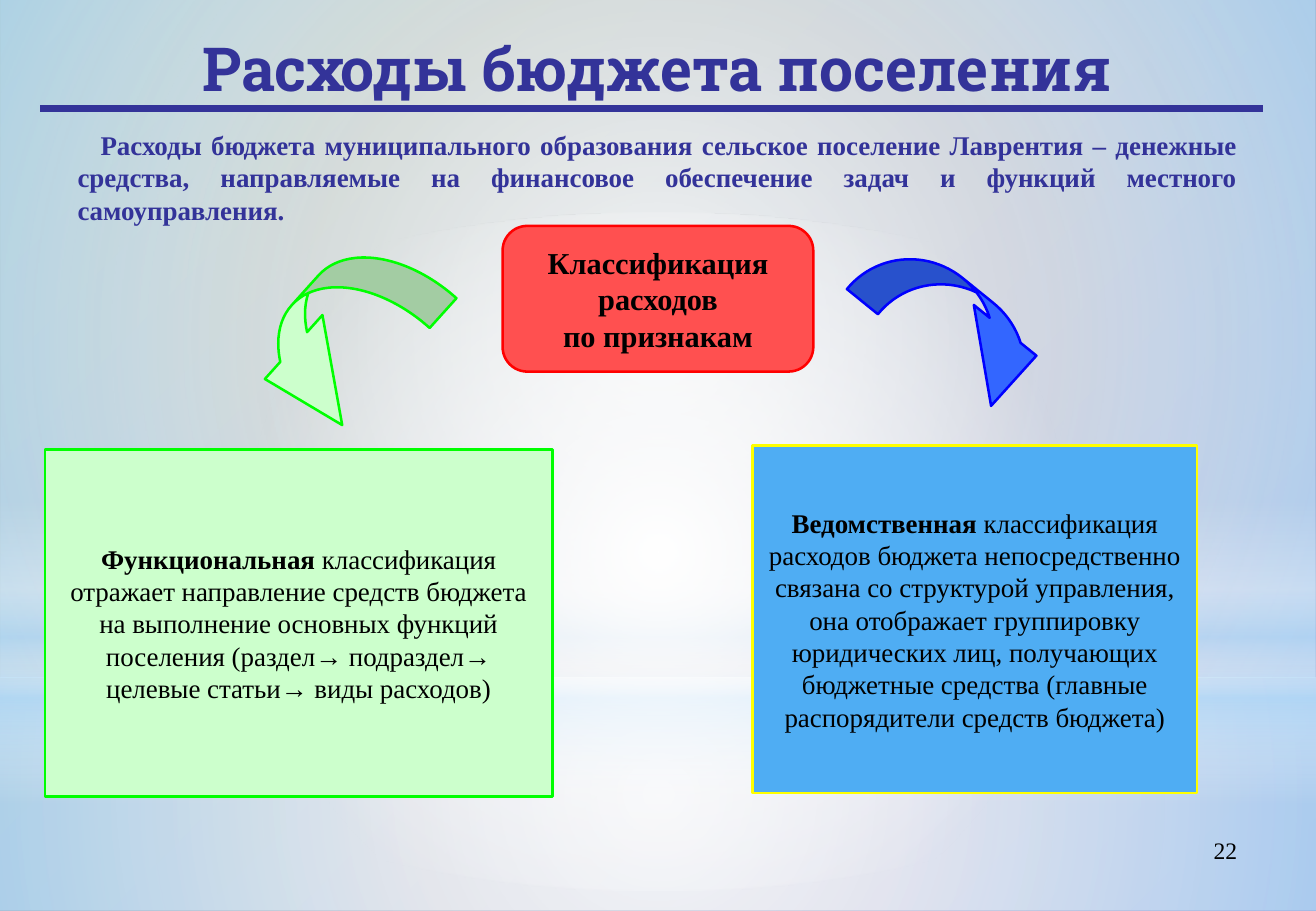
from lxml import etree
from pptx import Presentation
from pptx.dml.color import RGBColor
from pptx.enum import shapes, text
from pptx.oxml import ns
from pptx.util import Pt

WIDTH, HEIGHT = 780.48, 540
HORIZON = 401.76

BLACK = RGBColor(0x00, 0x00, 0x00)
WHITE = RGBColor(0xFF, 0xFF, 0xFF)
SKY = RGBColor(0xB4, 0xDC, 0xFA)
SAGE = RGBColor(0x96, 0xAB, 0x94)
LAVENDER = RGBColor(0x84, 0x88, 0xC4)
INDIGO = RGBColor(0x33, 0x33, 0x99)
CORAL = RGBColor(0xFF, 0x50, 0x50)
RED = RGBColor(0xFF, 0x00, 0x00)
MINT = RGBColor(0xCC, 0xFF, 0xCC)
GREEN = RGBColor(0x00, 0xFF, 0x00)
AZURE = RGBColor(0x4F, 0xAD, 0xF3)
YELLOW = RGBColor(0xFF, 0xFF, 0x00)
COBALT = RGBColor(0x33, 0x66, 0xFF)
BLUE = RGBColor(0x00, 0x00, 0xFF)

SERIF = "Times New Roman"
SLAB = "Roboto Slab"
KIND = shapes.MSO_SHAPE
ALIGN = text.PP_ALIGN
MIDDLE = text.MSO_ANCHOR.MIDDLE


def add_element(parent, tag, **attributes):
    values = {name: str(value) for name, value in attributes.items()}
    return etree.SubElement(parent, ns.qn(tag), values)


def paint_background(slide):
    fill = slide.background.fill
    fill.gradient()
    fill.gradient_angle = 315
    for stop, color, position in zip(fill.gradient_stops, (SAGE, LAVENDER), (0, 1)):
        stop.color.rgb = color
        stop.position = position


def add_shape(slide, kind, box, fill=None, line=None, adjustments=(), rotation=0):
    shape = slide.shapes.add_shape(kind, *map(Pt, box))
    shape.shadow.inherit = False
    shape.rotation = rotation
    for index, value in enumerate(adjustments):
        shape.adjustments[index] = value
    if fill is not None:
        shape.fill.solid()
        shape.fill.fore_color.rgb = fill
    if line is None:
        shape.line.fill.background()
    else:
        shape.line.color.rgb = line
        shape.line.width = Pt(1.5)
    return shape


def add_glow(slide, kind, top, height, stops, radial=True):
    shape = add_shape(slide, kind, (0, top, WIDTH, height))
    shape.fill.gradient()
    gradient = shape._element.spPr.find(ns.qn("a:gradFill"))
    for child in list(gradient):
        gradient.remove(child)
    stop_list = add_element(gradient, "a:gsLst")
    for position, color, opacity in stops:
        stop = add_element(stop_list, "a:gs", pos=position * 1000)
        tint = add_element(stop, "a:srgbClr", val=color)
        add_element(tint, "a:alpha", val=opacity * 1000)
    if radial:
        center = add_element(gradient, "a:path", path="circle")
        add_element(center, "a:fillToRect", l=50000, t=50000, r=50000, b=50000)
    else:
        add_element(gradient, "a:lin", ang=90 * 60000, scaled=0)


def write_text(shape, paragraphs, size, color=BLACK, font=SERIF, align=ALIGN.CENTER,
               anchor=MIDDLE, margins=(7.2, 3.6), bold=None, indent=0):
    frame = shape.text_frame
    frame.word_wrap = True
    frame.vertical_anchor = anchor
    frame.margin_left = frame.margin_right = Pt(margins[0])
    frame.margin_top = frame.margin_bottom = Pt(margins[1])
    for index, runs in enumerate(paragraphs):
        paragraph = frame.add_paragraph() if index else frame.paragraphs[0]
        paragraph.alignment = align
        if indent:
            paragraph._p.get_or_add_pPr().set("indent", str(Pt(indent)))
        paragraph.font.name = font
        paragraph.font.size = Pt(size)
        paragraph.font.color.rgb = color
        paragraph.font.bold = bold
        for words, run_bold in runs:
            run = paragraph.add_run()
            run.text = words
            run.font.bold = run_bold


def add_label(slide, box, words, size, **style):
    label = slide.shapes.add_textbox(*map(Pt, box))
    write_text(label, [[(words, None)]], size, **style)


def add_definition(slide, box, fill, line, term, meaning):
    shape = add_shape(slide, KIND.RECTANGLE, box, fill, line)
    write_text(shape, [[(term, True), (meaning, False)]], 16, margins=(8.64, 0))


def add_rule(slide, left, right, y):
    rule = slide.shapes.add_connector(
        shapes.MSO_CONNECTOR.STRAIGHT, Pt(left), Pt(y), Pt(right), Pt(y))
    rule.line.color.rgb = INDIGO
    rule.line.width = Pt(3.75)
    add_element(rule._element.spPr, "a:effectLst")


def add_backdrop(slide):
    paint_background(slide)
    add_glow(slide, KIND.RECTANGLE, HORIZON, HEIGHT - HORIZON,
             [(0, WHITE, 91), (37, WHITE, 76), (100, SKY, 79)])
    add_glow(slide, KIND.RECTANGLE, 0, HORIZON,
             [(0, WHITE, 89), (48, WHITE, 62), (100, SKY, 79)])
    add_glow(slide, KIND.RECTANGLE, 296.64, 180,
             [(0, WHITE, 0), (29, WHITE, 30), (45, SKY, 40),
              (55, WHITE, 26), (65, SKY, 60), (100, WHITE, 0)], radial=False)
    add_glow(slide, KIND.OVAL, 126, HORIZON, [(0, WHITE, 100), (56, WHITE, 0)])


def main():
    presentation = Presentation()
    presentation.slide_width = Pt(WIDTH)
    presentation.slide_height = Pt(HEIGHT)
    slide = presentation.slides.add_slide(presentation.slide_layouts[6])
    add_backdrop(slide)

    add_label(slide, (558.72, 491.76, 182.16, 37.44), "22", 14,
              align=ALIGN.RIGHT, anchor=text.MSO_ANCHOR.TOP)
    add_label(slide, (38.88, 14.4, 702, 50.4), "Расходы бюджета поселения", 36,
              color=INDIGO, font=SLAB, bold=True)
    add_label(slide, (38.88, 72.72, 702, 51.12),
              "Расходы бюджета муниципального образования сельское поселение "
              "Лаврентия – денежные средства, направляемые на финансовое "
              "обеспечение задач и функций местного самоуправления.", 16,
              color=INDIGO, align=ALIGN.JUSTIFY, anchor=text.MSO_ANCHOR.TOP,
              bold=True, indent=13.68)
    add_rule(slide, 23.76, 748.8, 64.4)

    classification = add_shape(slide, KIND.ROUNDED_RECTANGLE,
                               (298.08, 133.92, 184.32, 86.4), CORAL, RED, [0.17])
    write_text(classification,
               [[("Классификация расходов", None)], [("по признакам", None)]],
               18, margins=(10.08, 3.6), bold=True)

    add_definition(slide, (26.64, 266.4, 300.96, 205.92), MINT, GREEN,
                   "Функциональная",
                   " классификация отражает направление средств бюджета на "
                   "выполнение основных функций поселения (раздел→ подраздел→ "
                   "целевые статьи→ виды расходов)")
    add_definition(slide, (446.4, 264.24, 263.52, 205.92), AZURE, YELLOW,
                   "Ведомственная ",
                   "классификация расходов бюджета непосредственно связана со "
                   "структурой управления, она отображает группировку "
                   "юридических лиц, получающих бюджетные средства (главные "
                   "распорядители средств бюджета)")

    add_shape(slide, KIND.CURVED_UP_ARROW, (138.96, 165.6, 126.72, 69.84),
              MINT, GREEN, (0.34, 0.73, 0.75), 132)
    add_shape(slide, KIND.CURVED_DOWN_ARROW, (502.56, 170.64, 133.92, 48.24),
              COBALT, BLUE, (0.49, 0.99, 0.83), 39)
    presentation.save("out.pptx")


if __name__ == "__main__":
    main()
